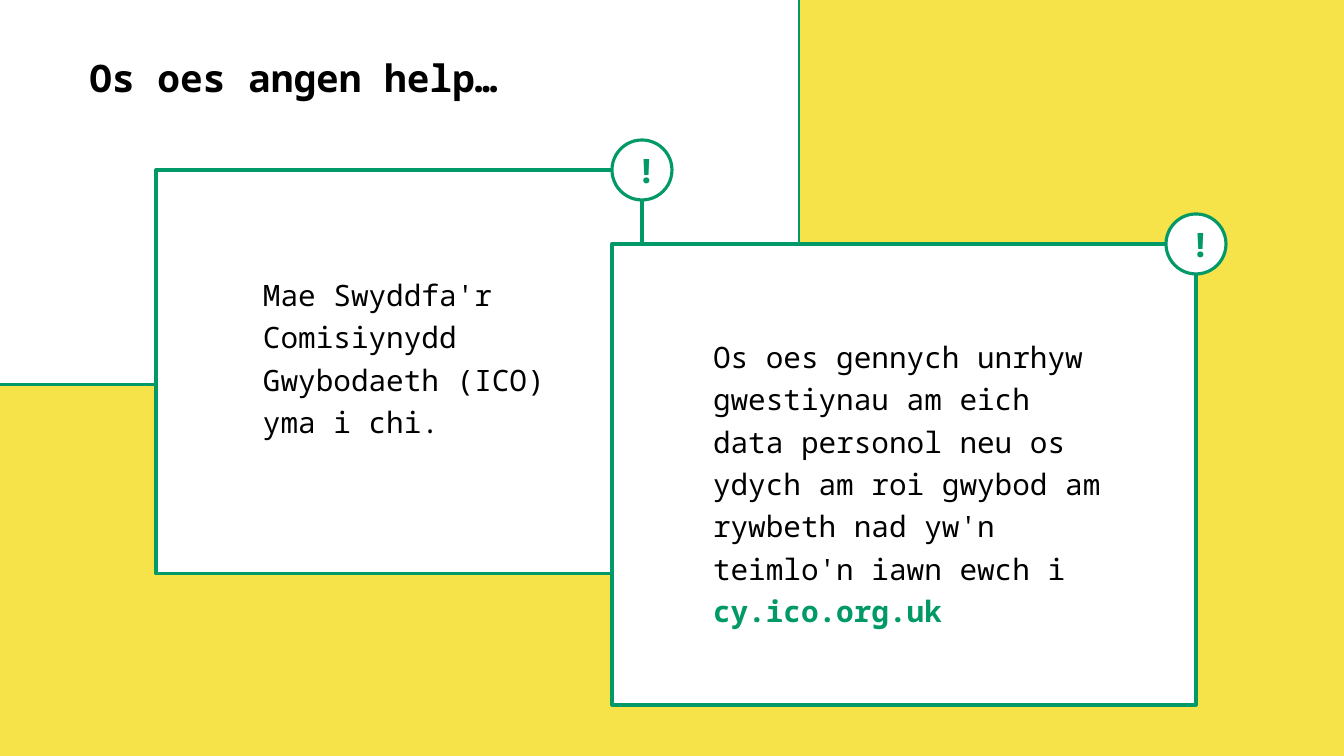
from pptx import Presentation
from pptx.dml.color import RGBColor
from pptx.enum.shapes import MSO_SHAPE
from pptx.enum.text import MSO_ANCHOR, PP_ALIGN
from pptx.util import Pt

RECT, OVAL = MSO_SHAPE.RECTANGLE, MSO_SHAPE.OVAL
MIDDLE, CENTER = MSO_ANCHOR.MIDDLE, PP_ALIGN.CENTER
PX = 12096
COLORS = {
    name: RGBColor.from_string(value)
    for name, value in {
        "yellow": "F6E249", "green": "019967", "white": "FFFFFF", "black": "000000",
    }.items()
}


def add_outlined(shapes, kind, box, line_width=3):
    shape = shapes.add_shape(kind, *[n * PX for n in box])
    shape.shadow.inherit = False
    shape.fill.solid()
    shape.fill.fore_color.rgb = COLORS["white"]
    shape.line.color.rgb = COLORS["green"]
    shape.line.width = Pt(line_width)


def add_text(shapes, box, size, color, bold=False):
    frame = shapes.add_textbox(*[n * PX for n in box]).text_frame
    frame.word_wrap = True
    paragraph = frame.paragraphs[0]
    paragraph.font.name = "Noto Sans Mono"
    paragraph.font.size = Pt(size)
    paragraph.font.color.rgb = COLORS[color]
    paragraph.font.bold = bold
    return frame, paragraph


prs = Presentation()
prs.slide_width, prs.slide_height = 1344 * PX, 756 * PX
slide = prs.slides.add_slide(prs.slide_layouts[6])
slide.background.fill.solid()
slide.background.fill.fore_color.rgb = COLORS["yellow"]

add_outlined(slide.shapes, RECT, (-24, -19, 823, 404), 2.75)
_, title = add_text(slide.shapes, (82, 51, 486, 44), 36, "black", True)
title.add_run().text = "Os oes angen help…"

cards = [
    ((156, 170, 486, 404), (253, 265, 369, 285),
     [("Mae Swyddfa'r Comisiynydd Gwybodaeth (ICO) yma i chi.", False)]),
    ((612, 244, 584, 461), (703, 327, 423, 330),
     [("Os oes gennych unrhyw gwestiynau am eich data personol neu os ydych "
       "am roi gwybod am rywbeth nad yw'n teimlo'n iawn ewch i ", False),
      ("cy.ico.org.uk", True)]),
]

for card_box, message_box, message_parts in cards:
    card = slide.shapes.add_group_shape().shapes
    add_outlined(card, RECT, card_box)

    frame, message = add_text(card, message_box, 28, "black")
    frame.margin_left = frame.margin_right = 10 * PX
    frame.margin_top = frame.margin_bottom = 5 * PX
    message.line_spacing = 1.2
    for words, highlighted in message_parts:
        run = message.add_run()
        run.text = words
        if highlighted:
            run.font.bold = True
            run.font.color.rgb = COLORS["green"]

    left, top, width, _ = card_box
    corner = left + width
    add_outlined(card, OVAL, (corner - 30, top - 30, 60, 60))
    frame, mark = add_text(card, (corner - 13, top - 24, 26, 54), 32, "green", True)
    frame.vertical_anchor = MIDDLE
    mark.alignment = CENTER
    mark.line_spacing = 0.9
    mark.space_before = Pt(12)
    mark.add_run().text = "!"

prs.save("out.pptx")
